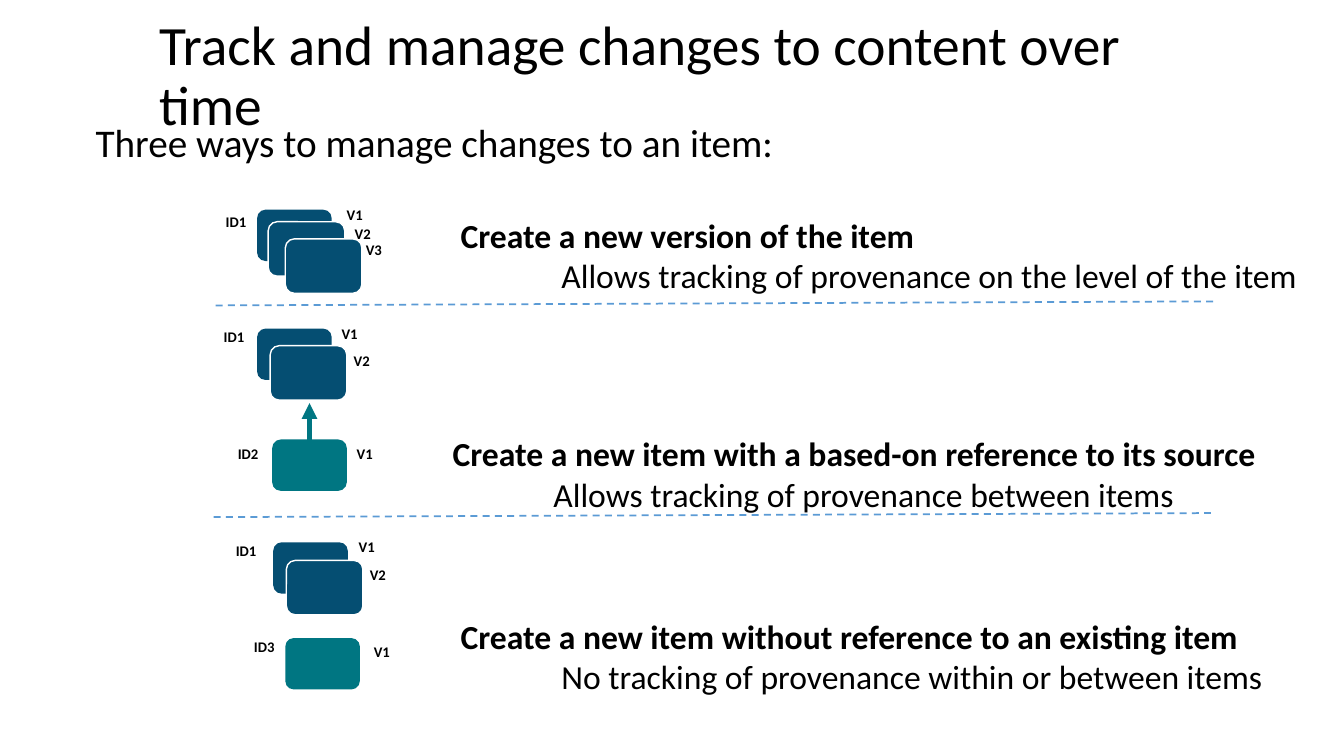
import pptx
import pptx.util
import pptx.dml.color
import pptx.enum.dml
import pptx.enum.shapes
import pptx.oxml
import pptx.oxml.ns
from dataclasses import dataclass

Inches, Pt = pptx.util.Inches, pptx.util.Pt
RGB = pptx.dml.color.RGBColor.from_string


@dataclass(frozen=True)
class Theme:
    font: str = "Calibri"
    text: str = "000000"
    blue: str = "054E72"
    teal: str = "007682"
    outline: str = "FFFFFF"
    divider: str = "5B9BD5"
    title: float = 39.6
    subtitle: float = 28
    body: float = 24
    label: float = 10.5


theme = Theme()
prs = pptx.Presentation()
prs.slide_width, prs.slide_height = Inches(13.33), Inches(7.5)
s = prs.slides.add_slide(prs.slide_layouts[6])


def add_text(x, y, w, h, lines, size, wrap=True):
    """Add a text box; lines holds (text, bold, indent) for each paragraph."""
    tf = s.shapes.add_textbox(Inches(x), Inches(y), Inches(w), Inches(h)).text_frame
    tf.word_wrap = wrap
    for i, (text, bold, indent) in enumerate(lines):
        p = tf.paragraphs[0] if i == 0 else tf.add_paragraph()
        p.text = text
        if indent:
            p._p.get_or_add_pPr().set("marL", str(Inches(indent)))
        p.font.name, p.font.size, p.font.bold = theme.font, Pt(size), bold
        p.font.color.rgb = RGB(theme.text)
    return tf


def add_line(x1, y1, x2, y2, color, width):
    line = s.shapes.add_connector(pptx.enum.shapes.MSO_CONNECTOR.STRAIGHT,
                                  Inches(x1), Inches(y1), Inches(x2), Inches(y2))
    line.line.color.rgb, line.line.width = RGB(color), Pt(width)
    line._element.spPr.append(pptx.oxml.parse_xml(
        f'<a:effectLst {pptx.oxml.ns.nsdecls("a")}/>'))
    return line


# Title and lead-in
for x, y, w, h, text, size, indent in [
    (0.86, 0.13, 11.2, 1.25, "Track and manage changes to content over time", theme.title, 0.62),
    (0.85, 1.18, 11.5, 0.55, "Three ways to manage changes to an item:", theme.subtitle, 0),
]:
    tf = add_text(x, y, w, h, [(text, False, indent)], size)
    tf.paragraphs[0].line_spacing = 0.9

# Arrow from the new item to its source
arrow = add_line(3.07, 4.87, 3.07, 4, theme.teal, 3.75)
arrow.line._get_or_add_ln().append(pptx.oxml.parse_xml(
    f'<a:tailEnd {pptx.oxml.ns.nsdecls("a")} type="triangle"/>'))

# Item cards: plain ones at the back of a stack, outlined ones in front
for x, y, color, outlined in [
    (2.55, 2.08, theme.blue, False), (2.66, 2.2, theme.blue, True), (2.83, 2.37, theme.blue, True),
    (2.55, 3.26, theme.blue, False), (2.68, 3.43, theme.blue, True), (2.7, 4.36, theme.teal, False),
    (2.71, 5.38, theme.blue, False), (2.84, 5.56, theme.blue, True), (2.83, 6.33, theme.teal, False),
]:
    w, h = (0.76, 0.54) if outlined else (0.74, 0.51)
    sp = s.shapes.add_shape(pptx.enum.shapes.MSO_SHAPE.ROUNDED_RECTANGLE,
                            Inches(x), Inches(y), Inches(w), Inches(h))
    sp.shadow.inherit = False
    sp.fill.solid()
    sp.fill.fore_color.rgb = RGB(color)
    if outlined:
        sp.line.color.rgb, sp.line.width = RGB(theme.outline), Pt(1)
    else:
        sp.line.fill.background()

# Item and version labels
for text, x, y in [
    ("ID1", 2.14, 2.06), ("V1", 3.34, 1.99), ("V2", 3.42, 2.18), ("V3", 3.53, 2.34),
    ("ID1", 2.12, 3.2), ("V1", 3.29, 3.17), ("V2", 3.41, 3.44),
    ("ID2", 2.26, 4.36), ("V1", 3.44, 4.36),
    ("ID1", 2.24, 5.33), ("V1", 3.46, 5.29), ("V2", 3.57, 5.56),
    ("ID3", 2.42, 6.28), ("V1", 3.61, 6.33),
]:
    w = 0.41 if text.startswith("ID") else 0.36
    add_text(x, y, w, 0.28, [(text, True, 0)], theme.label, wrap=False)

# Dashed dividers
for x1, y1, x2, y2 in [(2.14, 3.03, 12.06, 2.99), (2.12, 5.13, 12.05, 5.09)]:
    divider = add_line(x1, y1, x2, y2, theme.divider, 1.25)
    divider.line.dash_style = pptx.enum.dml.MSO_LINE.DASH

# Descriptions
for x, y, w, heading, detail in [
    (4.47, 2.08, 8.57, "Create a new version of the item",
     "Allows tracking of provenance on the level of the item"),
    (4.39, 4.25, 8.25, "Create a new item with a based-on reference to its source",
     "Allows tracking of provenance between items"),
    (4.47, 6.06, 8.23, "Create a new item without reference to an existing item",
     "No tracking of provenance within or between items"),
]:
    add_text(x, y, w, 0.91, [(heading, True, 0), (detail, False, 1)], theme.body)

prs.save("out.pptx")
